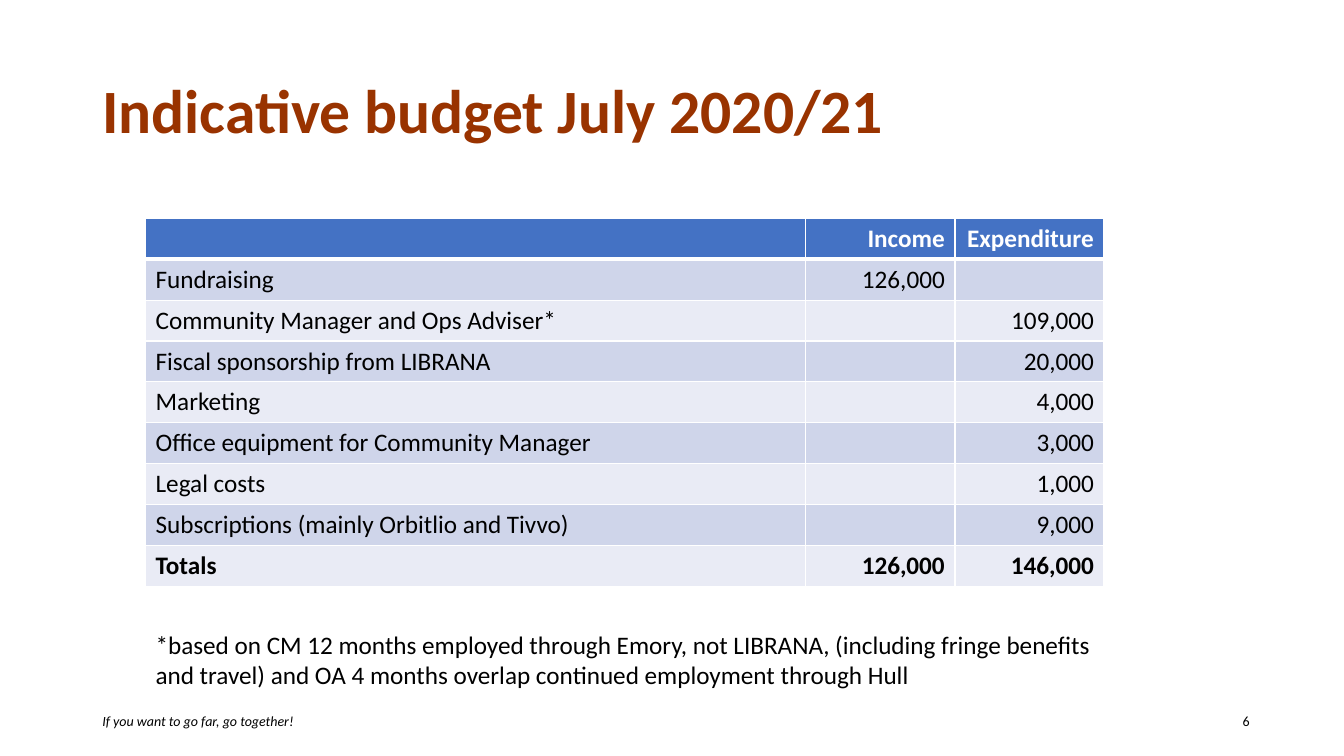
from pptx import Presentation
from pptx.dml.color import RGBColor
from pptx.enum.text import MSO_ANCHOR, PP_ALIGN
from pptx.oxml.ns import qn
from pptx.util import Pt
from lxml import etree

LEFT, RIGHT = PP_ALIGN.LEFT, PP_ALIGN.RIGHT
TOP, MIDDLE = MSO_ANCHOR.TOP, MSO_ANCHOR.MIDDLE

BLACK = RGBColor(0x00, 0x00, 0x00)
WHITE = RGBColor(0xFF, 0xFF, 0xFF)
RUST = RGBColor(0x99, 0x33, 0x00)
BLUE = RGBColor(0x44, 0x72, 0xC4)
BANDS = (RGBColor(0xE9, 0xEB, 0xF5), RGBColor(0xCF, 0xD5, 0xEA))

BUDGET = [
    ("", "Income", "Expenditure"),
    ("Fundraising", "126,000", ""),
    ("Community Manager and Ops Adviser*", "", "109,000"),
    ("Fiscal sponsorship from LIBRANA", "", "20,000"),
    ("Marketing", "", "4,000"),
    ("Office equipment for Community Manager", "", "3,000"),
    ("Legal costs", "", "1,000"),
    ("Subscriptions (mainly Orbitlio and Tivvo)", "", "9,000"),
    ("Totals", "126,000", "146,000"),
]
WIDTHS = (471.6, 106.5, 106.5)
ROW = 29.2


class Deck:
    """Holds the style and the current slide."""

    font = "Calibri"

    def __init__(self):
        self.prs = Presentation()
        self.prs.slide_width, self.prs.slide_height = Pt(960), Pt(540)
        self.slide = self.prs.slides.add_slide(self.prs.slide_layouts[6])

    def add_run(self, para, text, size, color, bold=False, italic=False):
        run = para.add_run()
        run.text = text
        font = run.font
        font.name, font.size = self.font, Pt(size)
        font.bold, font.italic = bold, italic
        font.color.rgb = color

    def text(self, box, text, size, color=BLACK, wrap=True, anchor=TOP,
             space=1.0, bold=False, italic=False):
        frame = self.slide.shapes.add_textbox(*map(Pt, box)).text_frame
        frame.word_wrap, frame.vertical_anchor = wrap, anchor
        para = frame.paragraphs[0]
        para.line_spacing = space
        self.add_run(para, text, size, color, bold, italic)

    def edge(self, cell, side, width):
        line = etree.SubElement(cell._tc.get_or_add_tcPr(), qn("a:ln" + side),
                                w=str(Pt(width)))
        fill = etree.SubElement(line, qn("a:solidFill"))
        etree.SubElement(fill, qn("a:srgbClr"), val=str(WHITE))

    def table(self, left, top, rows, widths, height):
        grid = self.slide.shapes.add_table(
            len(rows), len(widths), Pt(left), Pt(top),
            Pt(sum(widths)), Pt(height * len(rows))).table
        grid.horz_banding = False
        for col, width in zip(grid.columns, widths):
            col.width = Pt(width)
        for r, row in enumerate(rows):
            grid.rows[r].height = Pt(height)
            head, last = r == 0, r == len(rows) - 1
            for c, text in enumerate(row):
                cell = grid.cell(r, c)
                # Borders go before the fill; the header rule is thicker
                for side in "LRTB":
                    thick = (r, side) in ((0, "B"), (1, "T"))
                    self.edge(cell, side, 3 if thick else 1)
                cell.fill.solid()
                cell.fill.fore_color.rgb = BLUE if head else BANDS[r % 2]
                para = cell.text_frame.paragraphs[0]
                para.alignment = RIGHT if c else LEFT
                if text:
                    self.add_run(para, text, 18, WHITE if head else BLACK,
                                 bold=head or last)


def main():
    deck = Deck()

    # Title
    deck.text((66, 28.8, 828, 104.4), "Indicative budget July 2020/21", 44,
              RUST, anchor=MIDDLE, space=0.9, bold=True)

    # Budget table and its footnote
    deck.table(104, 156, BUDGET, WIDTHS, ROW)
    deck.text((104, 446, 684.6, 51),
              "*based on CM 12 months employed through Emory, not LIBRANA, "
              "(including fringe benefits and travel) and OA 4 months overlap "
              "continued employment through Hull", 18)

    # Footer
    deck.text((66, 505.5, 154, 19.4), "If you want to go far, go together!",
              10, wrap=False, italic=True)
    deck.text((880.5, 505.5, 26.6, 19.4), "6", 10, wrap=False)

    deck.prs.save("out.pptx")


if __name__ == "__main__":
    main()
